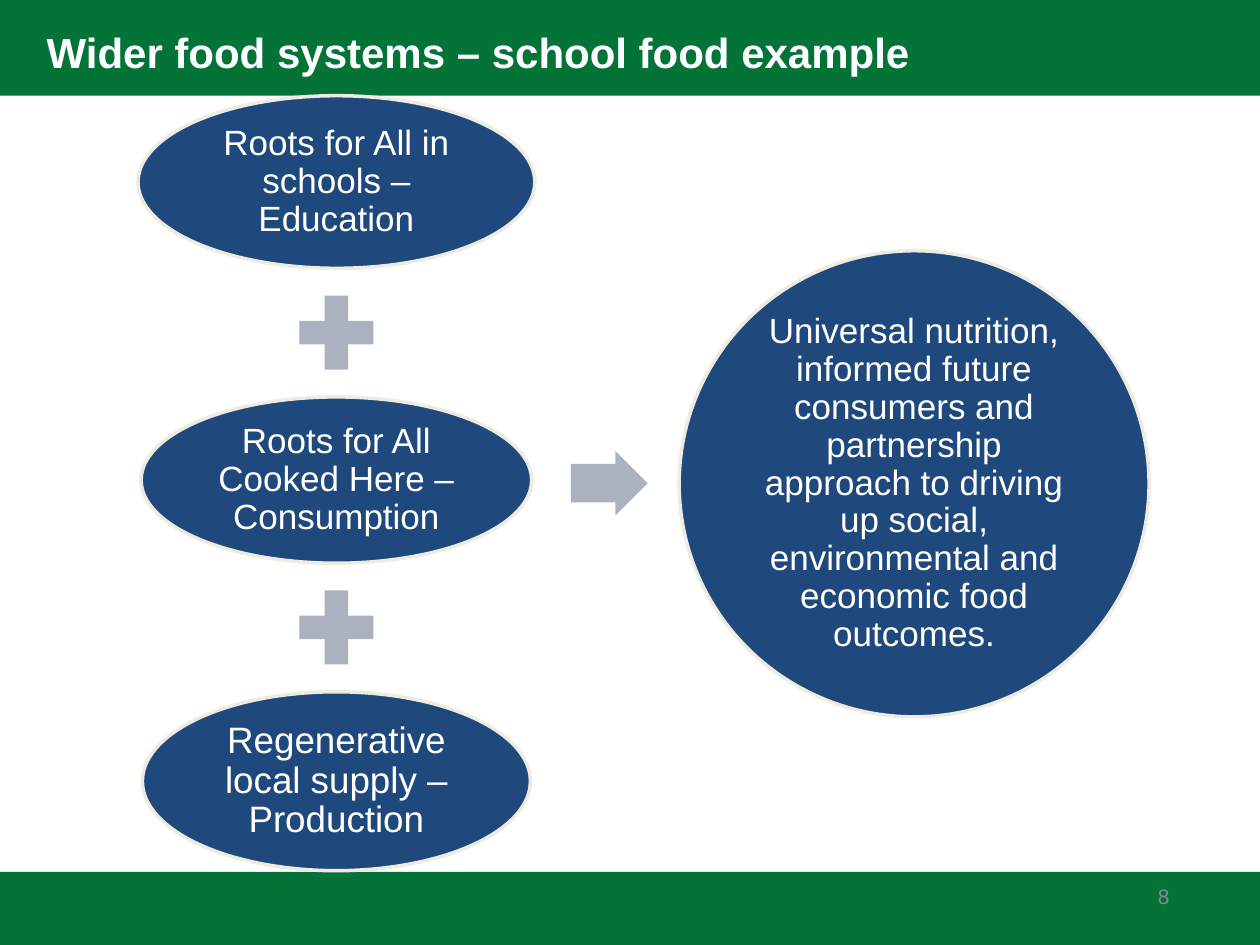
from pptx import Presentation
from pptx import util as u
from pptx.dml.color import RGBColor
from pptx.enum import shapes, text

GREEN = RGBColor(0x03, 0x73, 0x38)
NAVY = RGBColor(0x1F, 0x49, 0x7D)
CREAM = RGBColor(0xEE, 0xEC, 0xE1)
STEEL = RGBColor(0xAC, 0xB1, 0xBF)
GREY = RGBColor(0x89, 0x89, 0x89)
WHITE = RGBColor(0xFF, 0xFF, 0xFF)

WIDTH, HEIGHT = 10, 7.5
BAR = 0.76          # top bar height, where the stack starts
AXIS = 2.67         # centre line of the left stack
GAP, PLUS = 0.11, 0.8

# width, height, text size, wording
INPUTS = [
    (3.15, 1.37, 20, "Roots for All in schools – Education"),
    (3.10, 1.32, 20, "Roots for All Cooked Here – Consumption"),
    (3.08, 1.42, 21, "Regenerative local supply – Production"),
]
OUTCOME = (
    "Universal nutrition, informed future consumers and partnership approach "
    "to driving up social, environmental and economic food outcomes."
)


def apply(obj, formats):
    for name, value in formats.items():
        setattr(obj, name, value)


def box(*lengths):
    return [u.Inches(n) for n in lengths]


def write(tf, wording, size, color, paragraph, bold=False):
    p = tf.paragraphs[0]
    apply(p, paragraph)
    r = p.add_run()
    r.text = wording
    apply(r.font, {"name": "Arial", "size": u.Pt(size), "bold": bold})
    r.font.color.rgb = color


def add_solid(s, kind, place, color):
    sp = s.shapes.add_shape(kind, *box(*place))
    sp.shadow.inherit = False
    sp.fill.solid()
    sp.fill.fore_color.rgb = color
    sp.line.fill.background()
    return sp


def add_ellipse(s, place, size, wording):
    sp = add_solid(s, shapes.MSO_SHAPE.OVAL, place, NAVY)
    sp.line.color.rgb = CREAM
    sp.line.width = u.Pt(2)
    tf = sp.text_frame
    inset = u.Inches(0.03)
    apply(tf, {
        "word_wrap": True, "vertical_anchor": text.MSO_ANCHOR.MIDDLE,
        "margin_left": inset, "margin_right": inset,
        "margin_top": inset, "margin_bottom": inset,
    })
    write(tf, wording, size, WHITE,
          {"alignment": text.PP_ALIGN.CENTER, "line_spacing": 0.9})


def add_stack(s):
    """Ellipses down the axis with a plus sign between neighbours."""
    top = BAR
    for i, (w, h, size, wording) in enumerate(INPUTS):
        if i:
            add_solid(s, shapes.MSO_SHAPE.MATH_PLUS,
                      (AXIS - PLUS / 2, top + GAP, PLUS, PLUS), STEEL)
            top += PLUS + 2 * GAP
        add_ellipse(s, (AXIS - w / 2, top, w, h), size, wording)
        top += h


def add_title(s, wording):
    title = s.shapes.title
    apply(title, dict(zip(("left", "top", "width", "height"),
                          box(0.27, 0.16, 7.11, 0.51))))
    apply(title.text_frame, {
        "word_wrap": False, "vertical_anchor": text.MSO_ANCHOR.TOP,
        "auto_size": text.MSO_AUTO_SIZE.SHAPE_TO_FIT_TEXT,
    })
    write(title.text_frame, wording, 24, WHITE,
          {"alignment": text.PP_ALIGN.LEFT}, bold=True)
    s.shapes._spTree.append(title._element)  # bring in front of the bars


def add_page_number(s, number):
    tf = s.shapes.add_textbox(*box(7.13, 6.91, 2.25, 0.4)).text_frame
    apply(tf, {"word_wrap": True, "vertical_anchor": text.MSO_ANCHOR.MIDDLE})
    write(tf, number, 12, GREY, {"alignment": text.PP_ALIGN.RIGHT})


def main():
    prs = Presentation()
    prs.slide_width, prs.slide_height = box(WIDTH, HEIGHT)
    s = prs.slides.add_slide(prs.slide_layouts[5])
    for top, height in ((0, BAR), (6.92, HEIGHT - 6.92)):
        add_solid(s, shapes.MSO_SHAPE.RECTANGLE, (0, top, WIDTH, height), GREEN)
    add_title(s, "Wider food systems – school food example")
    add_page_number(s, "8")
    add_stack(s)
    arrow = add_solid(s, shapes.MSO_SHAPE.RIGHT_ARROW,
                      (4.53, 3.58, 0.61, 0.51), STEEL)
    arrow.adjustments[0] = 0.6
    add_ellipse(s, (5.39, 1.99, 3.73, 3.7), 20, OUTCOME)
    prs.save("out.pptx")


if __name__ == "__main__":
    main()
